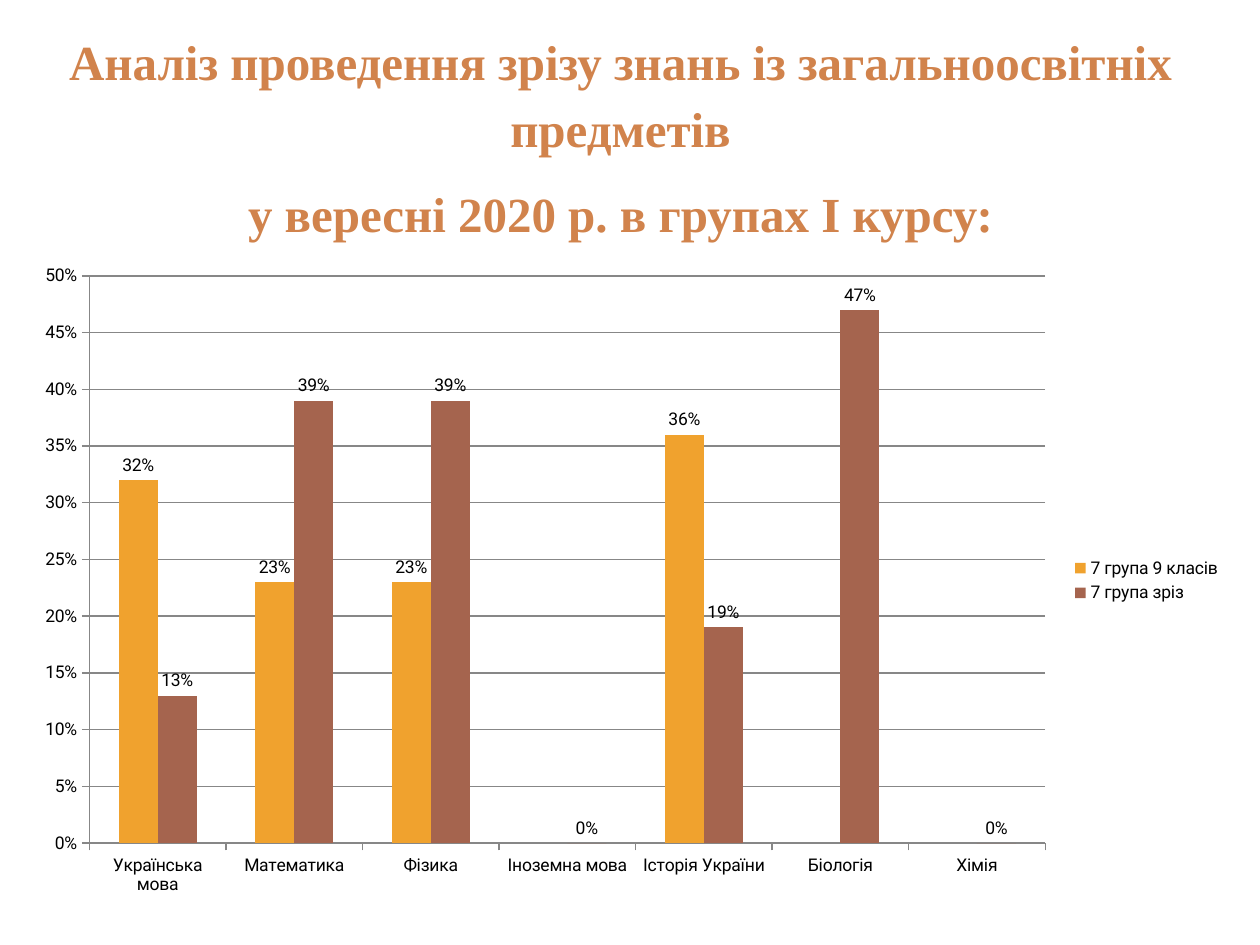
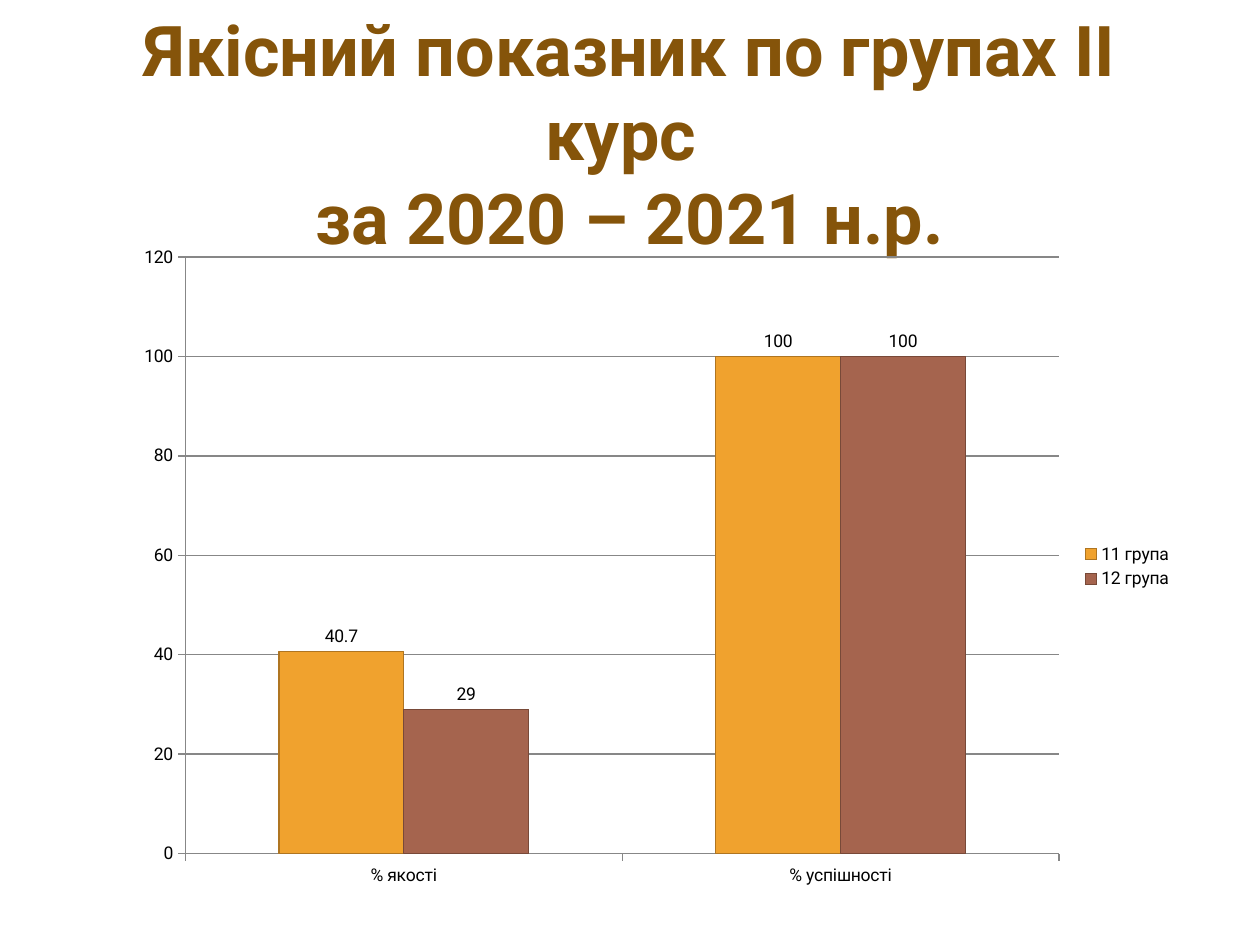
from pptx import Presentation
from pptx import util as u
from pptx.chart.data import CategoryChartData
from pptx.dml.color import RGBColor
from pptx.enum import chart as ch
from pptx.enum import text

PX = 914400 / 126
PAGE_SIZE = (1260, 945)
COPPER = RGBColor(0xD1, 0x83, 0x4C)
BROWN = RGBColor(0x85, 0x54, 0x0A)
BLACK = RGBColor(0, 0, 0)
GRID = RGBColor(0x87, 0x87, 0x87)
FILLS = (RGBColor(0xF0, 0xA2, 0x2E), RGBColor(0xA5, 0x64, 0x4E))
EDGES = (RGBColor(0xAF, 0x75, 0x21), RGBColor(0x78, 0x49, 0x38))
SANS = "Roboto"
SERIF = "Times New Roman"


def px(length):
    """Turn whole pixels into EMU."""
    return u.Emu(round(length * PX))


def place_title(page, box, lines, font, size, color, spacing=1.0, after=0):
    """Move the title placeholder to the box and format its lines."""
    title = page.shapes.title
    title.left, title.top, title.width, title.height = map(px, box)
    frame = title.text_frame
    frame.text = "\n".join(lines)
    frame.word_wrap = True
    frame.auto_size = text.MSO_AUTO_SIZE.SHAPE_TO_FIT_TEXT
    frame.vertical_anchor = text.MSO_ANCHOR.TOP
    for para in frame.paragraphs:
        para.alignment = text.PP_ALIGN.CENTER
        para.line_spacing = spacing
        para.space_before = u.Pt(0)
        para.space_after = u.Pt(after)
        for span in para.runs:
            span.font.name = font
            span.font.size = u.Pt(size)
            span.font.bold = True
            span.font.color.rgb = color


def style_line(line, color):
    """Give a line its colour and the common width."""
    line.color.rgb = color
    line.width = u.Pt(0.75)


def style_axes(chart, top, step, number_format):
    """Set scale, grid and tick marks of both axes."""
    values = chart.value_axis
    values.minimum_scale, values.maximum_scale = 0, top
    values.major_unit = step
    values.has_major_gridlines = True
    style_line(values.major_gridlines.format.line, GRID)
    values.tick_labels.number_format = number_format
    values.tick_labels.number_format_is_linked = False
    for axis in (values, chart.category_axis):
        axis.major_tick_mark = ch.XL_TICK_MARK.OUTSIDE
        axis.minor_tick_mark = ch.XL_TICK_MARK.NONE
        style_line(axis.format.line, GRID)


def place_columns(page, box, categories, series, top, step,
                  number_format="General", outlined=False):
    """Draw a clustered column chart with value labels in the box."""
    data = CategoryChartData(number_format=number_format)
    data.categories = categories
    for name, values in series.items():
        data.add_series(name, values)
    chart = page.shapes.add_chart(
        ch.XL_CHART_TYPE.COLUMN_CLUSTERED, *map(px, box), data).chart
    chart.has_title = False
    chart.font.name = SANS
    chart.font.size = u.Pt(10)
    chart.font.color.rgb = BLACK
    chart.has_legend = True
    chart.legend.position = ch.XL_LEGEND_POSITION.RIGHT
    chart.legend.include_in_layout = False
    style_axes(chart, top, step, number_format)
    plot = chart.plots[0]
    plot.gap_width = 150
    plot.overlap = 0
    plot.vary_by_categories = False
    for columns, fill, edge in zip(plot.series, FILLS, EDGES):
        columns.format.fill.solid()
        columns.format.fill.fore_color.rgb = fill
        if outlined:
            style_line(columns.format.line, edge)
        else:
            columns.format.line.fill.background()
        labels = columns.data_labels
        labels.show_value = True
        labels.number_format = number_format
        labels.number_format_is_linked = False
        labels.position = ch.XL_LABEL_POSITION.OUTSIDE_END


def add_page(deck):
    """Add a page that has only a title placeholder."""
    return deck.slides.add_slide(deck.slide_layouts[5])


def knowledge_page(deck):
    """Compare school marks and the knowledge check by subject."""
    page = add_page(deck)
    place_title(page, (25, 16, 1191, 236),
                ["Аналіз проведення зрізу знань із загальноосвітніх предметів",
                 "у вересні 2020 р. в групах І курсу:"],
                SERIF, 28, COPPER, spacing=1.15, after=10)
    subjects = ["Українська мова", "Математика", "Фізика", "Іноземна мова",
                "Історія України", "Біологія", "Хімія"]
    results = {
        "7 група 9 класів": (0.32, 0.23, 0.23, None, 0.36, None, None),
        "7 група зріз": (0.13, 0.39, 0.39, 0, 0.19, 0.47, 0),
    }
    place_columns(page, (21, 253, 1213, 655), subjects, results,
                  0.5, 0.05, number_format="0%")


def quality_page(deck):
    """Compare quality and success rates of two groups."""
    page = add_page(deck)
    place_title(page, (74, 0, 1111, 183),
                ["Якісний показник по групах ІІ курс ", "за 2020 – 2021 н.р."],
                SANS, 40, BROWN)
    rates = {"11 група": (40.7, 100), "12 група": (29, 100)}
    place_columns(page, (123, 234, 1062, 665), ["% якості", "% успішності"],
                  rates, 120, 20, outlined=True)


def main():
    """Build and save the deck."""
    deck = Presentation()
    deck.slide_width, deck.slide_height = map(px, PAGE_SIZE)
    knowledge_page(deck)
    quality_page(deck)
    deck.save("out.pptx")


if __name__ == "__main__":
    main()
